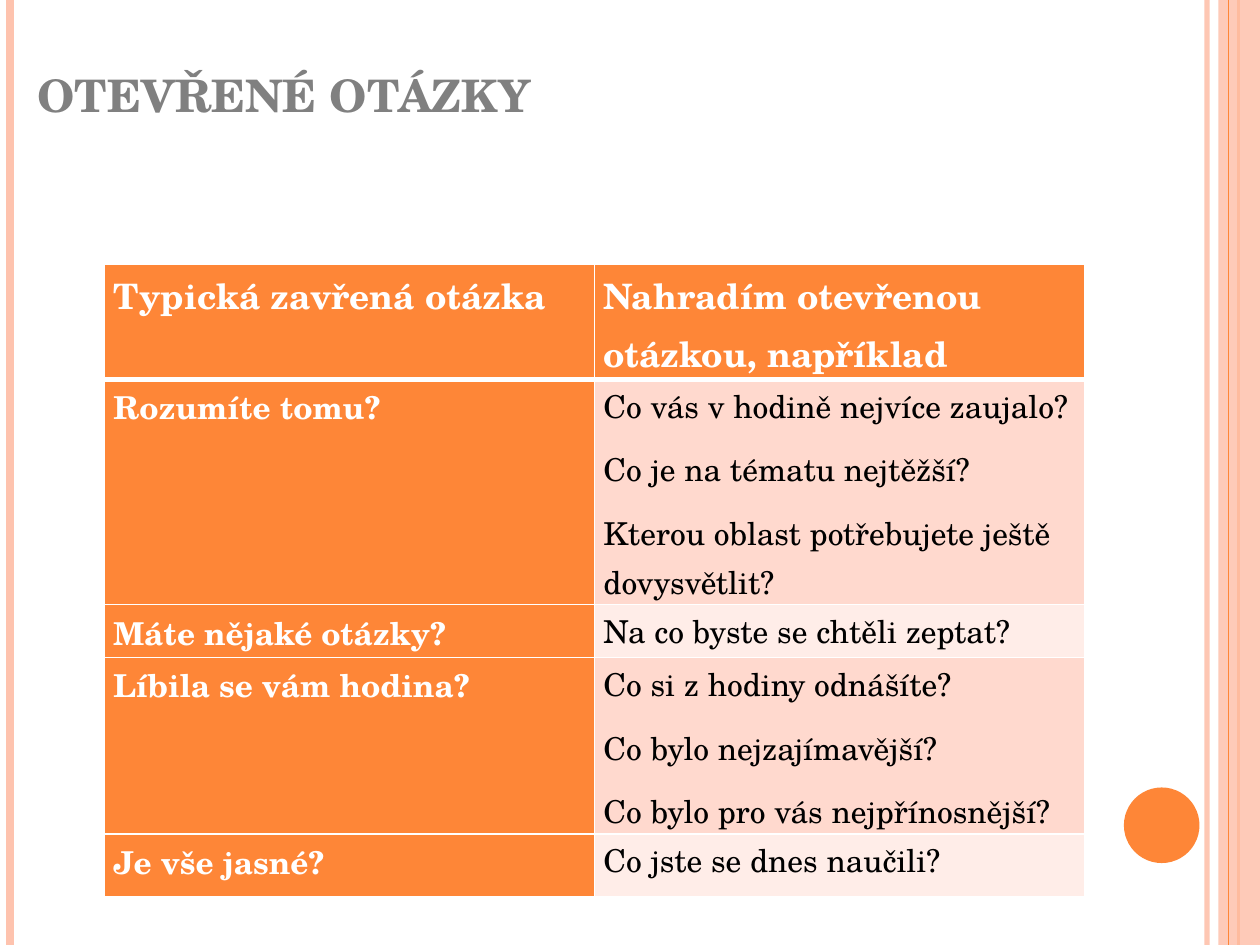
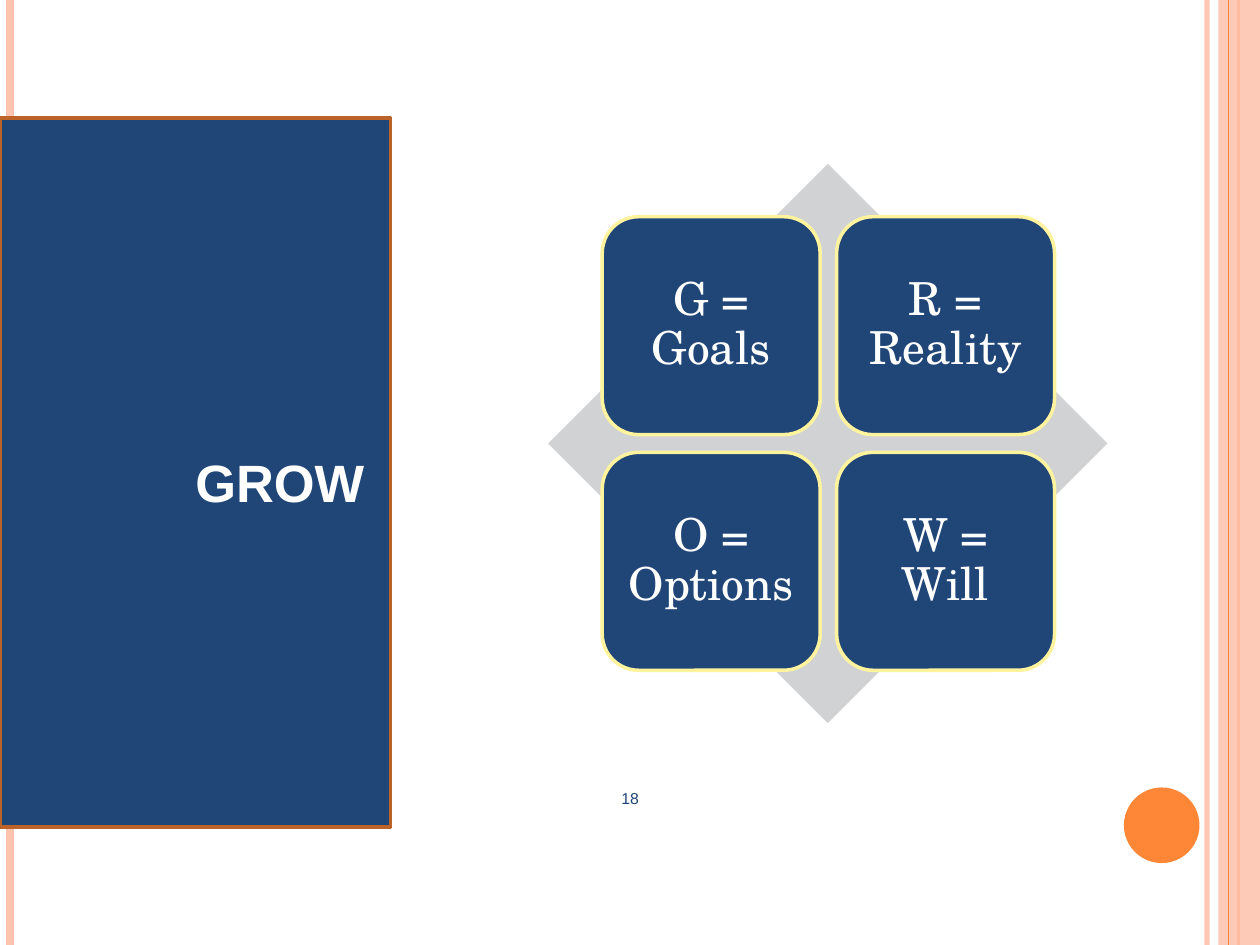
from lxml import etree
from pptx import Presentation
from pptx import util as u
from pptx.dml.color import RGBColor
from pptx.enum import shapes, text
from pptx.oxml import ns

PX = 9144  # EMU per px, 100 px to the inch
C = {
    "orange": "FE8637", "peach": "FEC3AE", "rust": "BC6329",
    "row_dark": "FFD9CE", "row_light": "FFEDE8",
    "navy": "204678", "number": "1F4578", "yellow": "FFF39D",
    "silver": "D1D2D4", "gray": "808080", "white": "FFFFFF", "black": "000000",
}
SERIF, SANS = "TeX Gyre Schola", "Arial"
AL, ANC, SHAPE = text.PP_ALIGN, text.MSO_ANCHOR, shapes.MSO_SHAPE


def write(tf, content, size, color, font=SERIF, bold=False, small=False,
          align=AL.LEFT, spacing=None, after=None):
    """Fill a text frame, one paragraph for each line of content."""
    tf.word_wrap = True
    for i, line in enumerate(content.split("\n")):
        p = tf.add_paragraph() if i else tf.paragraphs[0]
        p.alignment, p.line_spacing = align, spacing
        if after is not None:
            p.space_after = u.Pt(after)
        r = p.add_run()
        r.text = line
        r.font.name, r.font.size, r.font.bold = font, u.Pt(size), bold
        r.font.color.rgb = RGBColor.from_string(C[color])
        if small:
            r.font._element.set("cap", "small")


def add_box(s, kind, x, y, w, h, fill, line=None, weight=2):
    """Add a flat shape; line is a colour name for an outline of weight pt."""
    sp = s.shapes.add_shape(kind, x * PX, y * PX, w * PX, h * PX)
    sp.shadow.inherit = False
    sp.fill.solid()
    sp.fill.fore_color.rgb = RGBColor.from_string(C[fill])
    if line:
        sp.line.color.rgb = RGBColor.from_string(C[line])
        sp.line.width = u.Pt(weight)
    else:
        sp.line.fill.background()
    return sp


prs = Presentation()
prs.slide_width, prs.slide_height = 1000 * PX, 750 * PX
questions, grow = [prs.slides.add_slide(prs.slide_layouts[6]) for _ in range(2)]

# Shared frame: vertical stripes, right band and circle
STRIPES = [(958, "peach", 3, 93), (8, "peach", 4.5, 100),
           (983, "orange", 1.5, 100), (975, "orange", 0.75, 100)]
for s in (questions, grow):
    translucent = []
    for x, color, width, alpha in STRIPES:
        if x == 975:  # the band lies under the last stripe only
            band = add_box(s, SHAPE.RECTANGLE, 967, 0, 33, 750, "peach")
            translucent.append((band, 87))
        ln = s.shapes.add_connector(shapes.MSO_CONNECTOR.STRAIGHT,
                                    x * PX, 0, x * PX, 750 * PX)
        ln.line.color.rgb = RGBColor.from_string(C[color])
        ln.line.width = u.Pt(width)
        etree.SubElement(ln._element.spPr, ns.qn("a:effectLst"))
        translucent.append((ln, alpha))
    for sp, alpha in translucent:
        for clr in sp._element.spPr.iter(ns.qn("a:srgbClr")):
            etree.SubElement(clr, ns.qn("a:alpha"), val=str(alpha * 1000))
    add_box(s, SHAPE.OVAL, 892, 625, 60, 60, "orange")

# Slide 1: closed and open questions
title = questions.shapes.add_textbox(20 * PX, 29 * PX, 817 * PX, 125 * PX)
tf = title.text_frame
tf.vertical_anchor = ANC.BOTTOM
tf.margin_bottom = 56 * PX
write(tf, "otevřené otázky", 32, "gray", bold=True, small=True)

ROWS = [
    (91, "Typická zavřená otázka", "Nahradím otevřenou otázkou, například"),
    (179, "Rozumíte tomu?",
     "Co vás v hodině nejvíce zaujalo?\nCo je na tématu nejtěžší?\n"
     "Kterou oblast potřebujete ještě dovysvětlit?"),
    (42, "Máte nějaké otázky?", "Na co byste se chtěli zeptat?"),
    (140, "Líbila se vám hodina?",
     "Co si z hodiny odnášíte?\nCo bylo nejzajímavější?\n"
     "Co bylo pro vás nejpřínosnější?"),
    (50, "Je vše jasné?", "Co jste se dnes naučili?"),
]
table = questions.shapes.add_table(len(ROWS), 2, 83 * PX, 210 * PX, 778 * PX,
                                   sum(row[0] for row in ROWS) * PX).table
for col in table.columns:
    col.width = 389 * PX
for i, (height, *pair) in enumerate(ROWS):
    table.rows[i].height = height * PX
    for j, content in enumerate(pair):
        cell = table.cell(i, j)
        cell.margin_left = cell.margin_right = 7 * PX
        cell.margin_top = cell.margin_bottom = 0
        thick = {0: "lnB", 1: "lnT"}.get(i)
        for side in ("lnL", "lnR", "lnT", "lnB"):
            width = u.Pt(3 if side == thick else 1)
            ln = etree.SubElement(cell._tc.get_or_add_tcPr(),
                                  ns.qn("a:" + side), w=str(width))
            fill = etree.SubElement(ln, ns.qn("a:solidFill"))
            etree.SubElement(fill, ns.qn("a:srgbClr"), val=C["white"])
        strong = i == 0 or j == 0
        shade = "orange" if strong else ("row_light", "row_dark")[i % 2]
        cell.fill.solid()
        cell.fill.fore_color.rgb = RGBColor.from_string(C[shade])
        write(cell.text_frame, content, 18 if i else 20,
              "white" if strong else "black", bold=strong,
              spacing=1.07, after=8)

# Slide 2: the GROW model
number = grow.shapes.add_textbox(69 * PX, 621 * PX, 862 * PX, 25 * PX)
write(number.text_frame, "18", 9, "number", font=SANS, align=AL.CENTER)

add_box(grow, SHAPE.DIAMOND, 435, 130, 444, 444, "silver")
for i, step in enumerate(["G = Goals", "R = Reality", "O = Options", "W = Will"]):
    row, col = divmod(i, 2)
    tile = add_box(grow, SHAPE.ROUNDED_RECTANGLE, 478 + 186 * col,
                   172 + 187 * row, 173, 173, "navy", "yellow")
    tf = tile.text_frame
    tf.vertical_anchor = ANC.MIDDLE
    tf.margin_left = tf.margin_right = tf.margin_top = tf.margin_bottom = 11 * PX
    write(tf, step, 26, "white", align=AL.CENTER, spacing=0.9)

add_box(grow, SHAPE.RECTANGLE, 0, 94, 310, 562, "navy", "rust", weight=2.25)
title = grow.shapes.add_textbox(0, 303 * PX, 310 * PX, 109 * PX)
tf = title.text_frame
tf.vertical_anchor = ANC.BOTTOM
write(tf, "GROW", 30, "white", font=SANS, bold=True, small=True, align=AL.CENTER)

prs.save("out.pptx")
